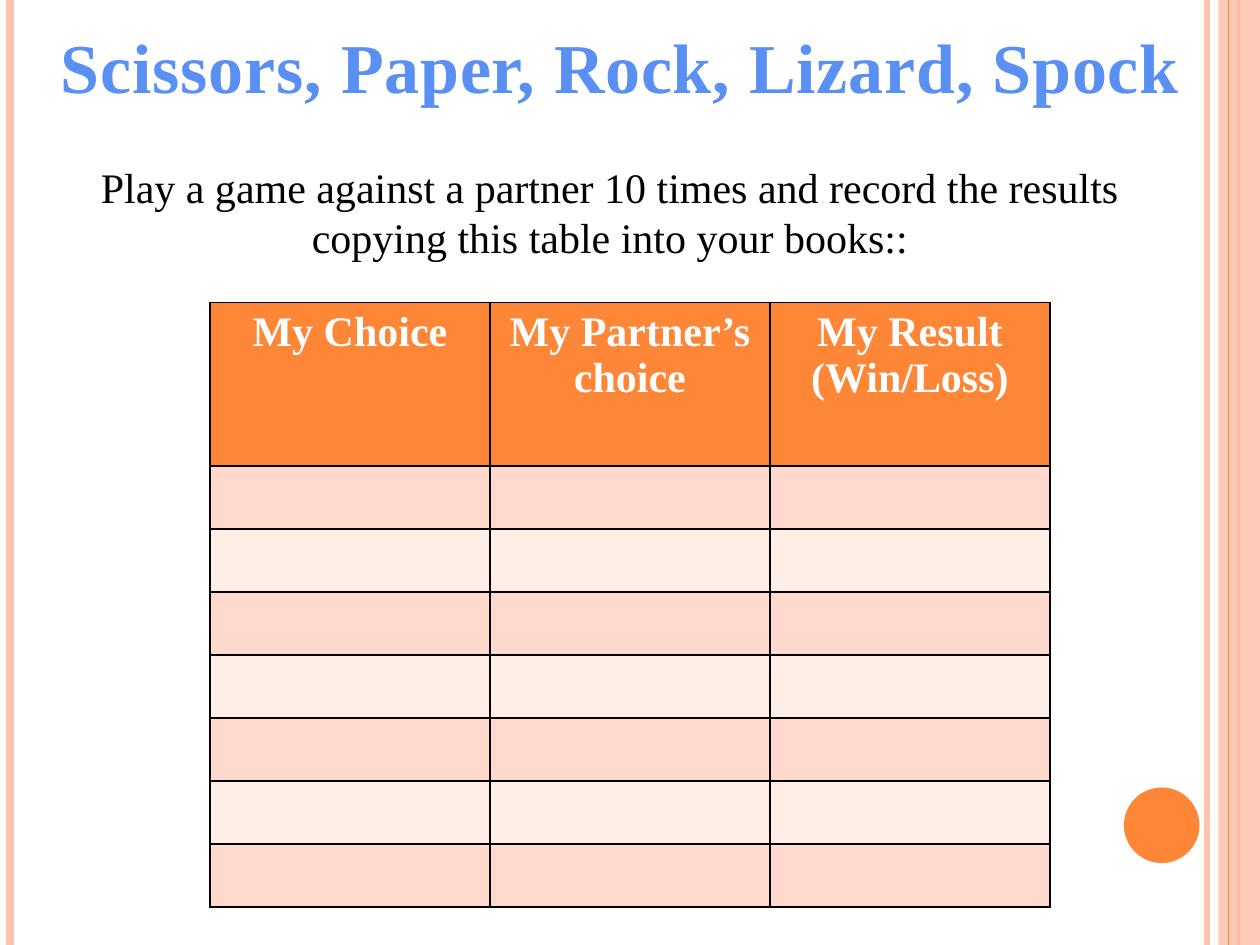
import pptx
import pptx.dml.color
import pptx.enum.shapes
import pptx.enum.text
import pptx.oxml
import pptx.oxml.ns
import pptx.util

COLORS = {
    "title": "5A90F4",
    "text": "000000",
    "header text": "FFFFFF",
    "accent": "FE8637",
    "pale accent": "FEC3AE",
    "odd row": "FFD9CE",
    "even row": "FFEDE8",
}
FONT = "Times New Roman"


def rgb(name):
    return pptx.dml.color.RGBColor.from_string(COLORS[name])


def add_centered_run(paragraph, text, size, color, bold=False):
    paragraph.alignment = pptx.enum.text.PP_ALIGN.CENTER
    run = paragraph.add_run()
    run.text = text
    run.font.name = FONT
    run.font.size = pptx.util.Pt(size)
    run.font.bold = bold
    run.font.color.rgb = rgb(color)
    return run


presentation = pptx.Presentation()
presentation.slide_width = width = pptx.util.Inches(10)
presentation.slide_height = height = pptx.util.Inches(7.5)
slide = presentation.slides.add_slide(presentation.slide_layouts[5])
inch = pptx.util.Inches

# Vertical stripes, with the translucent band over the third one
stripes = [
    (9.58, "pale accent", 3),
    (0.08, "pale accent", 4.5),
    (9.83, "accent", 1.5),
    (9.67, "band", 0),
    (9.75, "accent", 0.75),
]
for x, color, weight in stripes:
    if color == "band":
        band = slide.shapes.add_shape(
            pptx.enum.shapes.MSO_SHAPE.RECTANGLE, inch(x), 0, width - inch(x), height)
        band.shadow.inherit = False
        band.fill.solid()
        band.fill.fore_color.rgb = rgb("pale accent")
        band.line.fill.background()
        band_color = band.fill._xPr.find(".//" + pptx.oxml.ns.qn("a:srgbClr"))
        band_color.append(pptx.oxml.parse_xml(
            f'<a:alpha {pptx.oxml.ns.nsdecls("a")} val="87000"/>'))
        continue
    stripe = slide.shapes.add_connector(
        pptx.enum.shapes.MSO_CONNECTOR.STRAIGHT, inch(x), 0, inch(x), height)
    stripe.line.color.rgb = rgb(color)
    stripe.line.width = pptx.util.Pt(weight)
    stripe._element.spPr.append(pptx.oxml.parse_xml(
        f'<a:effectLst {pptx.oxml.ns.nsdecls("a")}/>'))

dot = slide.shapes.add_shape(
    pptx.enum.shapes.MSO_SHAPE.OVAL, inch(8.92), inch(6.25), inch(0.6), inch(0.6))
dot.shadow.inherit = False
dot.fill.solid()
dot.fill.fore_color.rgb = rgb("accent")
dot.line.fill.background()

# Title and instruction
title = slide.shapes.title
title.left, title.top, title.width, title.height = map(inch, (0.04, 0.14, 9.78, 0.77))
title.text_frame.vertical_anchor = pptx.enum.text.MSO_ANCHOR.TOP
title.text_frame.auto_size = pptx.enum.text.MSO_AUTO_SIZE.NONE
title_run = add_centered_run(
    title.text_frame.paragraphs[0], "Scissors, Paper, Rock, Lizard, Spock", 40, "title", True)
title_run.font._element.set("spc", "50")

instruction = slide.shapes.add_textbox(*map(inch, (0.43, 1.23, 8.82, 0.91)))
instruction.text_frame.word_wrap = True
add_centered_run(
    instruction.text_frame.paragraphs[0],
    "Play a game against a partner 10 times and record the results "
    "copying this table into your books::", 24, "text")

# Results table: a tall header and seven empty rows
headers = [["My Choice"], ["My Partner’s choice"], ["My Result", "(Win/Loss)"]]
row_count = 8
header_height, row_height = inch(1.3), inch(0.5)
table_width = width * 2 // 3
table = slide.shapes.add_table(
    row_count, len(headers), (width - table_width) // 2, inch(2.4),
    table_width, header_height + (row_count - 1) * row_height).table
for row_index, row in enumerate(table.rows):
    row.height = row_height if row_index else header_height
    fill = ("odd row" if row_index % 2 else "even row") if row_index else "accent"
    for column_index, cell in enumerate(row.cells):
        cell.fill.solid()
        cell.fill.fore_color.rgb = rgb(fill)
        properties = cell._tc.get_or_add_tcPr()
        for position, side in enumerate("LRTB"):
            properties.insert(position, pptx.oxml.parse_xml(
                f'<a:ln{side} {pptx.oxml.ns.nsdecls("a")} w="12700"><a:solidFill>'
                f'<a:srgbClr val="{COLORS["text"]}"/></a:solidFill></a:ln{side}>'))
        if row_index == 0:
            frame = cell.text_frame
            for line_index, line in enumerate(headers[column_index]):
                paragraph = frame.add_paragraph() if line_index else frame.paragraphs[0]
                add_centered_run(paragraph, line, 24, "header text", True)

presentation.save("out.pptx")
